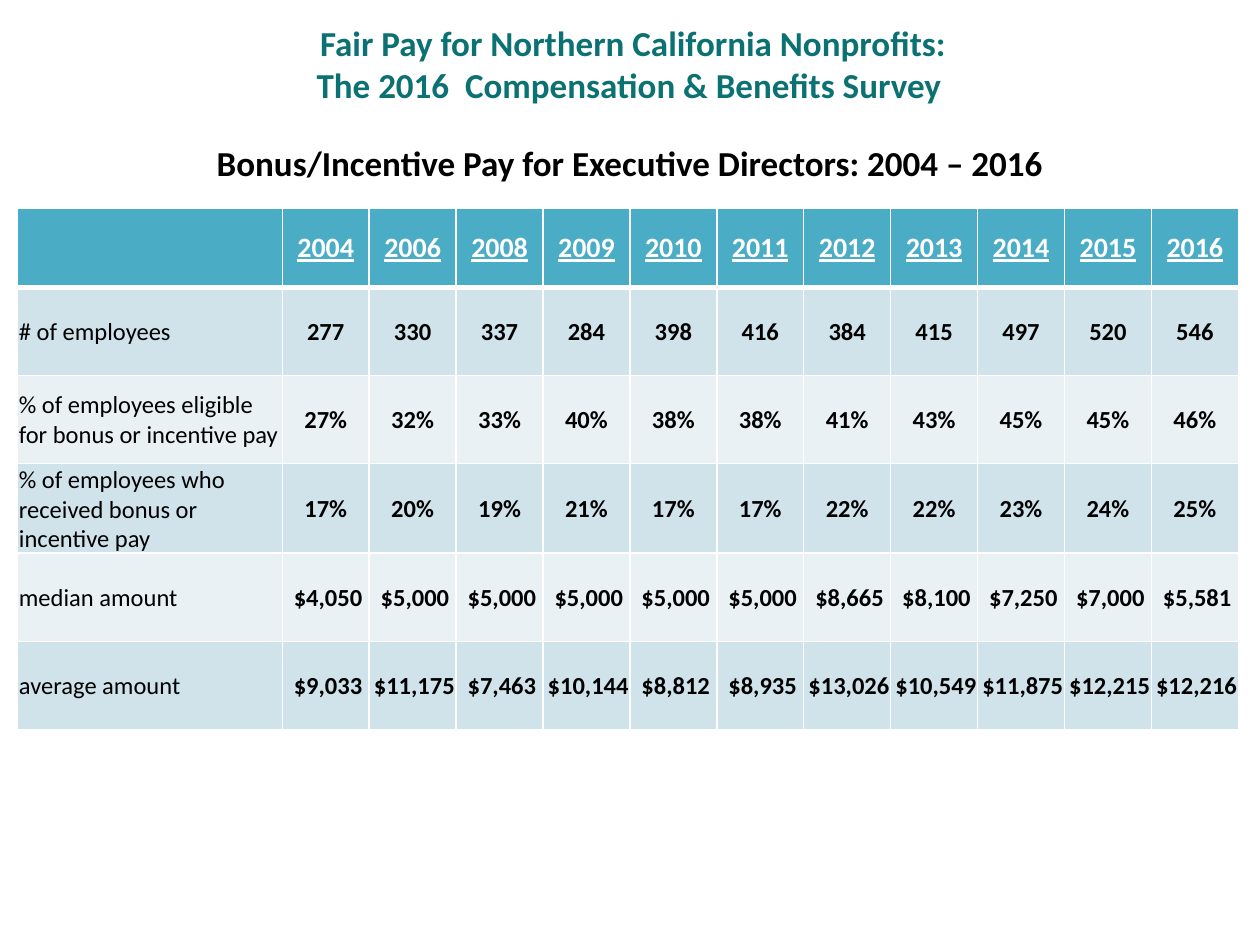
"""Build a slide on bonus pay for executive directors, 2004 to 2016."""
from lxml.etree import SubElement as Sub
from pptx import Presentation
from pptx.dml.color import RGBColor as Rgb
from pptx.enum.text import MSO_ANCHOR as Anchor, PP_ALIGN as Align
from pptx.oxml.ns import qn
from pptx.util import Inches, Pt

COLORS = {
    "teal": "0B7173",
    "black": "000000",
    "white": "FFFFFF",
    "head": "4BACC6",
    "dark": "D0E3EA",
    "light": "E9F1F5",
}
TITLE = [
    "Fair Pay for Northern California Nonprofits:",
    "The 2016  Compensation & Benefits Survey ",
]
TOPIC = "Bonus/Incentive Pay for Executive Directors: 2004 – 2016"
YEARS = ["2004", "2006", "2008", "2009", "2010", "2011",
         "2012", "2013", "2014", "2015", "2016"]
ROWS = [
    ("# of employees", Align.CENTER,
     ["277", "330", "337", "284", "398", "416",
      "384", "415", "497", "520", "546"]),
    ("% of employees eligible for bonus or incentive pay", Align.CENTER,
     ["27%", "32%", "33%", "40%", "38%", "38%",
      "41%", "43%", "45%", "45%", "46%"]),
    ("% of employees who received bonus or incentive pay", Align.CENTER,
     ["17%", "20%", "19%", "21%", "17%", "17%",
      "22%", "22%", "23%", "24%", "25%"]),
    ("median amount", Align.RIGHT,
     ["$4,050 ", "$5,000 ", "$5,000 ", "$5,000 ", "$5,000 ", "$5,000 ",
      "$8,665 ", "$8,100 ", "$7,250 ", "$7,000 ", "$5,581 "]),
    ("average amount", Align.RIGHT,
     ["$9,033 ", "$11,175 ", "$7,463 ", "$10,144 ", "$8,812 ", "$8,935 ",
      "$13,026 ", "$10,549 ", "$11,875 ", "$12,215", "$12,216"]),
]
HEIGHTS = [0.63, 0.7, 0.7, 0.71, 0.7, 0.7]
LABEL_W, YEAR_W = 2.1, 0.69


def add_run(para, text, size, color, bold=True, line=False):
    """Add one styled run to a paragraph."""
    run = para.add_run()
    run.text = text
    font = run.font
    font.name, font.size = "Calibri", Pt(size)
    font.bold, font.underline = bold, line
    font.color.rgb = Rgb.from_string(COLORS[color])


def add_title(slide):
    """Move the title placeholder and fill in its two lines."""
    title = slide.shapes.title
    title.left, title.top = Inches(1.07), Inches(0.17)
    title.width, title.height = Inches(7.91), Inches(0.67)
    frame = title.text_frame
    frame.vertical_anchor = Anchor.MIDDLE
    for i, text in enumerate(TITLE):
        para = frame.add_paragraph() if i else frame.paragraphs[0]
        para.alignment = Align.CENTER
        add_run(para, text, 20, "teal")


def add_topic(slide):
    """Add the heading above the table."""
    box = slide.shapes.add_textbox(0, Inches(1.07), Inches(10), Inches(0.37))
    frame = box.text_frame
    frame.word_wrap = True
    para = frame.paragraphs[0]
    para.alignment = Align.CENTER
    add_run(para, TOPIC, 20, "black")


def set_edges(cell, top=1, bottom=1):
    """Draw white borders around a cell."""
    props = cell._tc.get_or_add_tcPr()
    for tag, width in (("lnL", 1), ("lnR", 1), ("lnT", top), ("lnB", bottom)):
        edge = Sub(props, qn(f"a:{tag}"), w=str(Pt(width)))
        fill = Sub(edge, qn("a:solidFill"))
        Sub(fill, qn("a:srgbClr"), val=COLORS["white"])


def set_cell(cell, fill, pads):
    """Set the fill, anchor and margins of a cell."""
    cell.fill.solid()
    cell.fill.fore_color.rgb = Rgb.from_string(COLORS[fill])
    cell.vertical_anchor = Anchor.MIDDLE
    (cell.margin_left, cell.margin_top,
     cell.margin_right, cell.margin_bottom) = map(Inches, pads)


def fill_head(table):
    """Write the row of years."""
    for col, year in enumerate([""] + YEARS):
        cell = table.cell(0, col)
        set_edges(cell, bottom=3)
        set_cell(cell, "head", (0.1, 0.05, 0.1, 0.05))
        if year:
            para = cell.text_frame.paragraphs[0]
            para.alignment = Align.CENTER
            add_run(para, year, 16, "white", line=True)


def fill_row(table, row, label, align, values):
    """Write one measure and its yearly values."""
    for col, text in enumerate([label] + values):
        cell = table.cell(row, col)
        set_edges(cell, top=3 if row == 1 else 1)
        set_cell(cell, "dark" if row % 2 else "light", (0.01, 0.01, 0.01, 0))
        para = cell.text_frame.paragraphs[0]
        para.alignment = align if col else Align.LEFT
        add_run(para, text, 14, "black", bold=col > 0)


def add_grid(slide):
    """Add the table of pay by year."""
    widths = [LABEL_W] + [YEAR_W] * len(YEARS)
    table = slide.shapes.add_table(
        len(HEIGHTS), len(widths), Inches(0.14), Inches(1.65),
        Inches(sum(widths)), Inches(sum(HEIGHTS))).table
    for col, width in zip(table.columns, widths):
        col.width = Inches(width)
    for row, height in zip(table.rows, HEIGHTS):
        row.height = Inches(height)
    fill_head(table)
    for row, data in enumerate(ROWS, 1):
        fill_row(table, row, *data)


def main():
    """Build and save the slide."""
    deck = Presentation()
    deck.slide_width, deck.slide_height = Inches(10), Inches(7.5)
    slide = deck.slides.add_slide(deck.slide_layouts[5])
    add_title(slide)
    add_topic(slide)
    add_grid(slide)
    deck.save("out.pptx")


if __name__ == "__main__":
    main()
